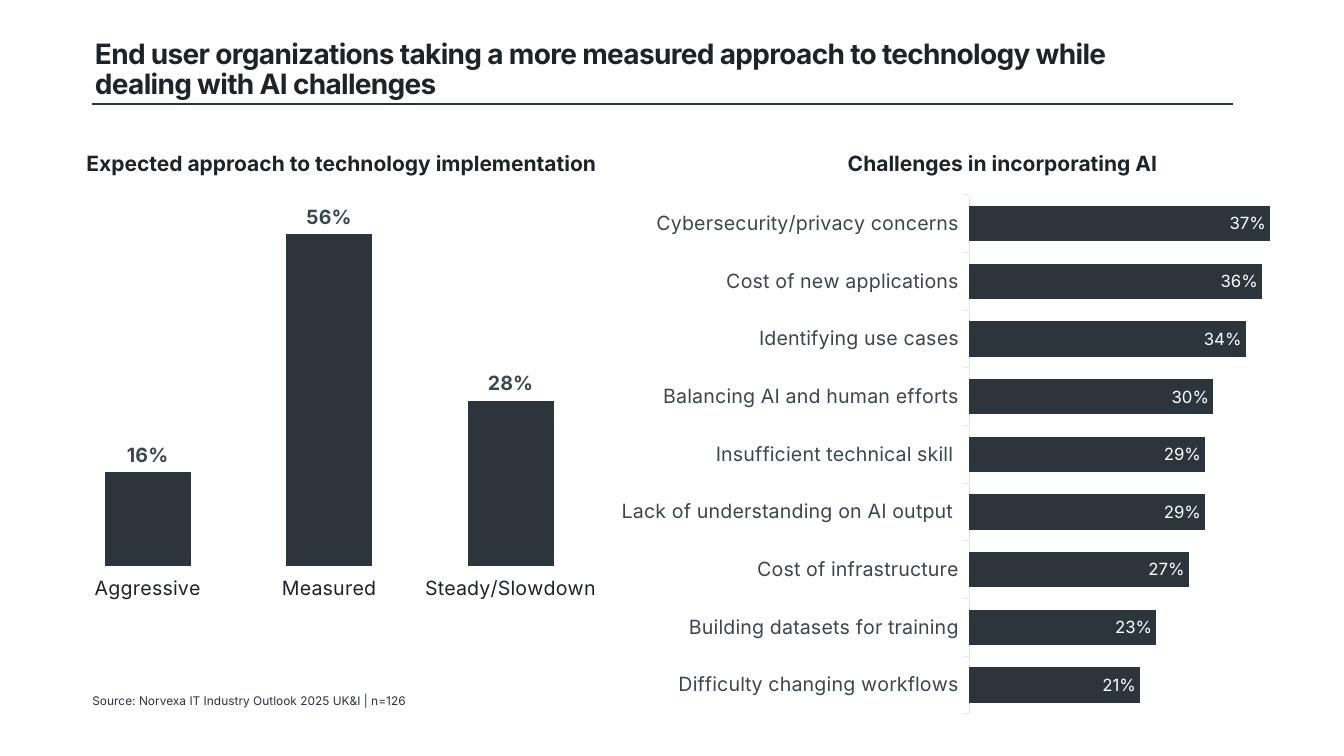
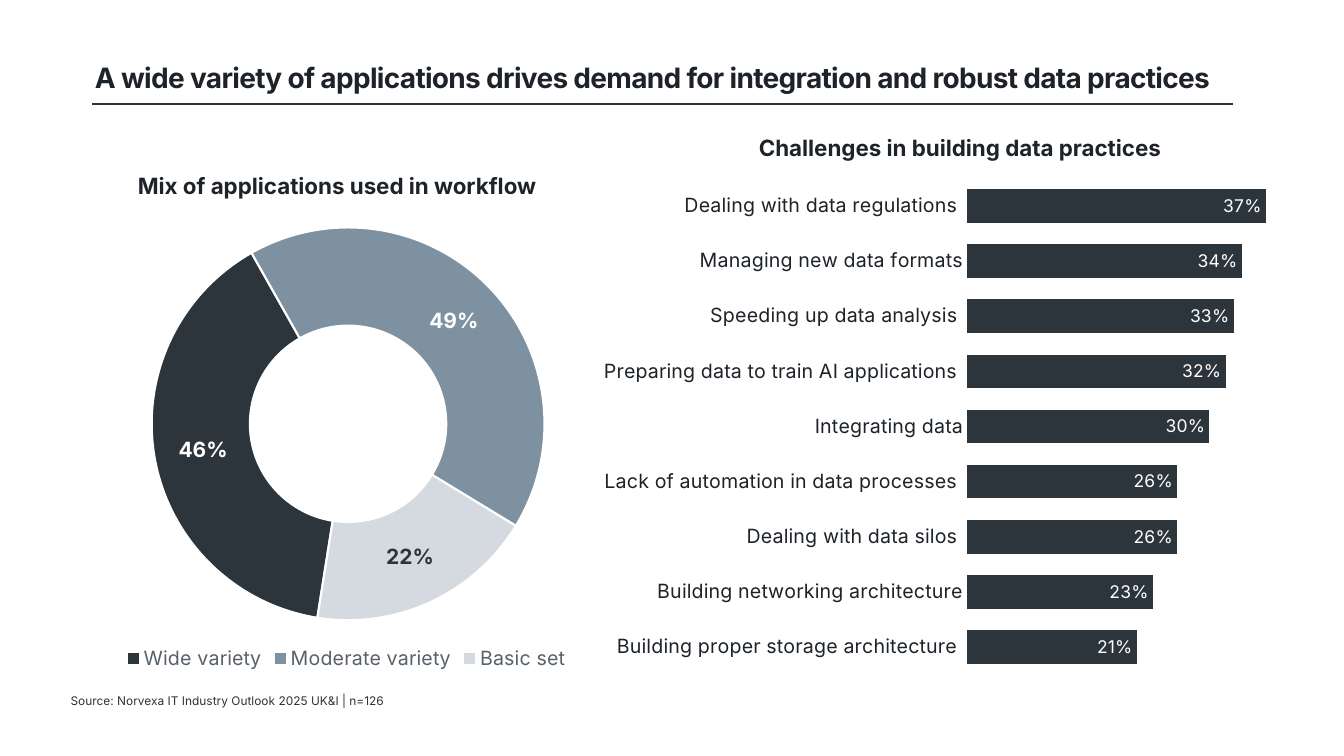
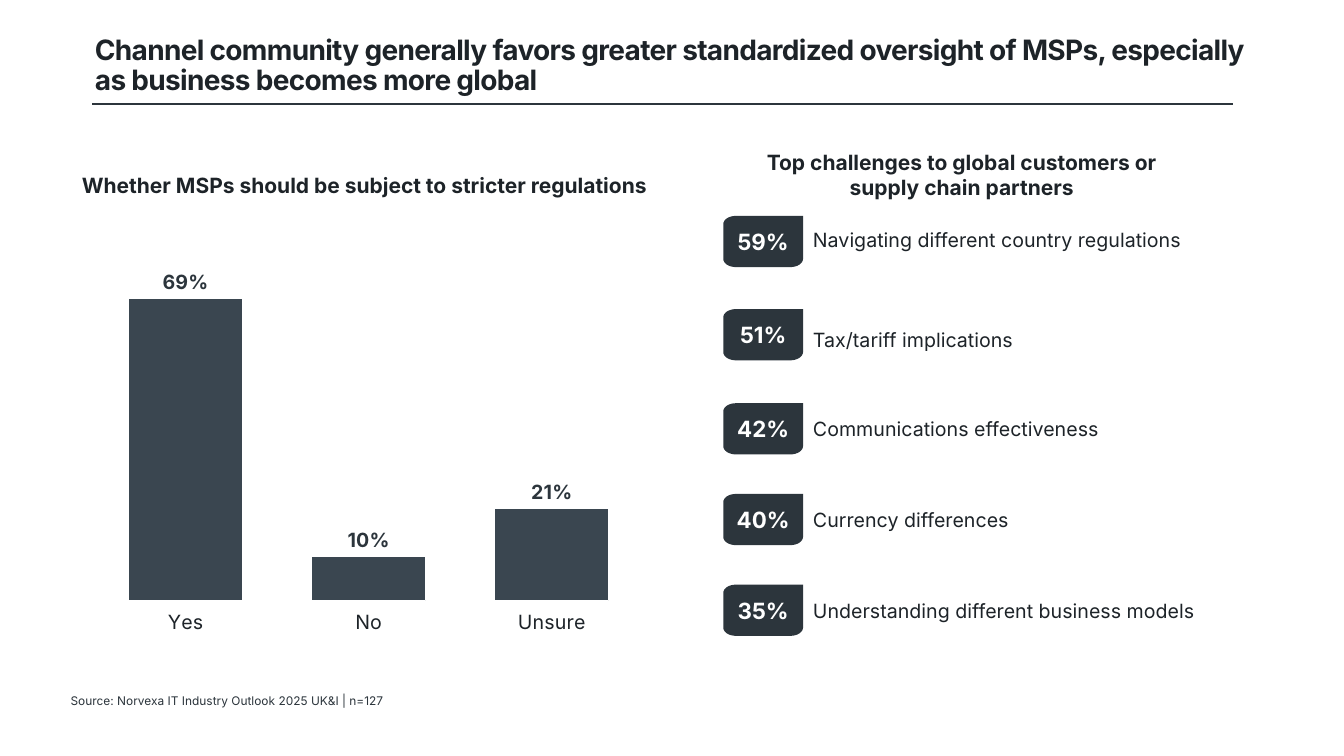
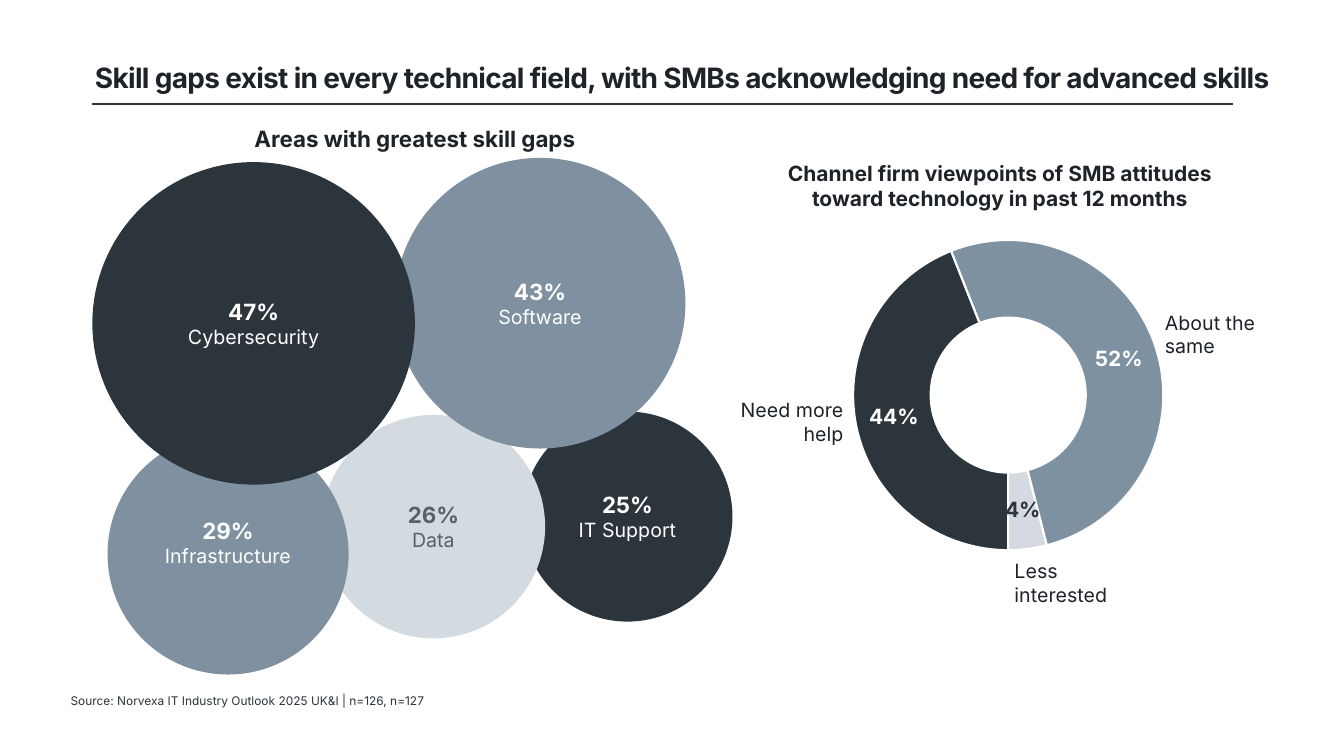
from dataclasses import dataclass
from math import cos, pi, sin
from typing import Optional

from lxml import etree
from pptx import Presentation
from pptx.chart.data import CategoryChartData
from pptx.dml.color import RGBColor
from pptx.enum.chart import XL_CHART_TYPE as Chart
from pptx.enum.chart import XL_LABEL_POSITION as LabelPos
from pptx.enum.chart import XL_LEGEND_POSITION as LegendPos
from pptx.enum.chart import XL_TICK_MARK as Tick
from pptx.enum.shapes import MSO_CONNECTOR as Connector
from pptx.enum.shapes import MSO_SHAPE as Shape
from pptx.enum.text import MSO_ANCHOR as Anchor
from pptx.enum.text import MSO_AUTO_SIZE as AutoSize
from pptx.enum.text import PP_ALIGN as Align
from pptx.oxml.ns import qn
from pptx.util import Inches, Pt

INK = RGBColor(0x1D, 0x23, 0x28)
NAVY = RGBColor(0x2C, 0x35, 0x3C)
SLATE = RGBColor(0x3A, 0x46, 0x50)
GREY = RGBColor(0x58, 0x61, 0x69)
STEEL = RGBColor(0x7E, 0x91, 0xA1)
MIST = RGBColor(0xD4, 0xDA, 0xE0)
BUBBLE_STEEL = RGBColor(0x7F, 0x91, 0xA1)
BUBBLE_MIST = RGBColor(0xD3, 0xDB, 0xE0)
HAIRLINE = RGBColor(0xE5, 0xE7, 0xE9)
WHITE = RGBColor(0xFF, 0xFF, 0xFF)

FONT = "Inter"
CHART_FONT = "Roboto"
PERCENT = "0%"
SURVEY = "Source: Norvexa IT Industry Outlook 2025 UK&I | "

# The slide is a grid of 160 columns and 90 rows of square cells.
CELL = Inches(7.5) / 90


def cells(n: float) -> int:
    return round(n * CELL)


@dataclass(frozen=True)
class Box:
    col: float
    row: float
    cols: float
    rows: float

    def emu(self) -> tuple[int, int, int, int]:
        return cells(self.col), cells(self.row), cells(self.cols), cells(self.rows)


@dataclass(frozen=True)
class Style:
    size: float
    color: RGBColor = INK
    bold: bool = False
    name: str = FONT


@dataclass(frozen=True)
class Bars:
    kind: Chart
    box: Box
    plot: tuple[float, float, float, float]
    data: dict[str, float]
    top: float
    gap: int
    labels: Style
    label_pos: LabelPos
    axis: Style
    fill: RGBColor = NAVY
    outline: Optional[RGBColor] = None
    axis_line: Optional[RGBColor] = None
    tick: Tick = Tick.OUTSIDE
    overlap: int = 0


@dataclass(frozen=True)
class Ring:
    box: Box
    plot: tuple[float, float, float, float]
    data: dict[str, float]
    start: int
    legend: bool = False


@dataclass(frozen=True)
class Badge:
    row: float
    label_row: float
    value: str
    label: str


@dataclass(frozen=True)
class Bubble:
    col: float
    row: float
    size: float
    fill: RGBColor
    value: str
    label: str
    color: RGBColor = WHITE
    bottom_inset: float = 0.6


TITLE = Style(20, bold=True)
HEADING = Style(15, bold=True)
BIG_HEADING = Style(16, bold=True)
BODY = Style(14)
SOURCE = Style(8.5, NAVY)


def apply(font, style: Style) -> None:
    formats = {"size": Pt(style.size), "bold": style.bold, "name": style.name}
    for key, value in formats.items():
        setattr(font, key, value)
    font.color.rgb = style.color


def set_insets(tf, inset: float) -> None:
    for side in ("left", "top", "right", "bottom"):
        setattr(tf, f"margin_{side}", inset)


def add_text(slide, box: Box, text: str, style: Style, align: Align = Align.LEFT):
    tf = slide.shapes.add_textbox(*box.emu()).text_frame
    tf.word_wrap = True
    tf.auto_size = AutoSize.SHAPE_TO_FIT_TEXT
    p = tf.paragraphs[0]
    p.alignment = align
    r = p.add_run()
    r.text = text
    apply(r.font, style)
    return tf


def add_heading(slide, box: Box, text: str, style: Style = HEADING) -> None:
    add_text(slide, box, text, style, Align.CENTER)


def new_slide(prs, title: str, box: Box, sample: str, source_col: float = 8.4):
    """Add a slide with its title, the rule under it and the source line."""
    slide = prs.slides.add_slide(prs.slide_layouts[5])
    sp = slide.shapes.title
    sp.left, sp.top, sp.width, sp.height = box.emu()
    tf = sp.text_frame
    tf.auto_size = AutoSize.NONE
    tf.vertical_anchor = Anchor.MIDDLE
    p = tf.paragraphs[0]
    p.alignment, p.line_spacing = Align.LEFT, 0.9
    r = p.add_run()
    r.text = title
    apply(r.font, TITLE)
    r.font._element.set("spc", "-50")

    rule = slide.shapes.add_connector(
        Connector.STRAIGHT, cells(11), cells(12.4), cells(146.8), cells(12.4))
    rule.line.color.rgb = NAVY
    rule.line.width = Pt(1)
    etree.SubElement(rule._element.spPr, qn("a:effectLst"))

    tf = add_text(slide, Box(source_col, 82.2, 84, 2.4), SURVEY + sample, SOURCE)
    tf.auto_size = AutoSize.NONE
    tf.vertical_anchor = Anchor.MIDDLE
    set_insets(tf, 0)
    return slide


def place_plot(chart, plot: tuple[float, float, float, float]) -> None:
    """Fix the inner plot area as shares of the chart frame."""
    area = chart._chartSpace.chart.plotArea
    for old in area.findall(qn("c:layout")):
        area.remove(old)
    layout = etree.Element(qn("c:layout"))
    manual = etree.SubElement(layout, qn("c:manualLayout"))
    values = {"layoutTarget": "inner", "xMode": "edge", "yMode": "edge"}
    values |= dict(zip("xywh", plot))
    for tag, value in values.items():
        etree.SubElement(manual, qn(f"c:{tag}")).set("val", str(value))
    area.insert(0, layout)


def add_chart(slide, kind: Chart, item):
    data = CategoryChartData(number_format=PERCENT)
    data.categories = list(item.data)
    data.add_series("Series 1", list(item.data.values()))
    chart = slide.shapes.add_chart(kind, *item.box.emu(), data).chart
    chart.has_title = False
    chart.has_legend = False
    apply(chart.font, Style(11, GREY, name=CHART_FONT))
    place_plot(chart, item.plot)
    return chart


def add_value_labels(plot, style: Style):
    plot.has_data_labels = True
    labels = plot.data_labels
    labels.show_value = True
    labels.number_format = PERCENT
    labels.number_format_is_linked = False
    apply(labels.font, style)
    return labels


def add_bars(slide, bars: Bars) -> None:
    chart = add_chart(slide, bars.kind, bars)
    plot = chart.plots[0]
    plot.vary_by_categories = False
    plot.gap_width, plot.overlap = bars.gap, bars.overlap
    add_value_labels(plot, bars.labels).position = bars.label_pos

    series = plot.series[0]
    series.invert_if_negative = False
    series.format.fill.solid()
    series.format.fill.fore_color.rgb = bars.fill
    if bars.outline is not None:
        series.format.line.color.rgb = bars.outline
        series.format.line.width = Pt(0.75)

    values = chart.value_axis
    values.minimum_scale, values.maximum_scale = 0, bars.top
    values.has_major_gridlines = False
    values.visible = False

    axis = chart.category_axis
    axis.major_tick_mark = bars.tick
    axis.minor_tick_mark = Tick.NONE
    apply(axis.tick_labels.font, bars.axis)
    if bars.axis_line is None:
        axis.format.line.fill.background()
    else:
        axis.format.line.color.rgb = bars.axis_line
        axis.format.line.width = Pt(0.75)


def add_ring(slide, ring: Ring) -> None:
    chart = add_chart(slide, Chart.DOUGHNUT, ring)
    plot = chart.plots[0]
    add_value_labels(plot, Style(15, NAVY, bold=True))
    for tag, value in {"firstSliceAng": ring.start, "holeSize": 54}.items():
        plot._element.find(qn(f"c:{tag}")).set("val", str(value))
    colors = ((NAVY, WHITE), (STEEL, WHITE), (MIST, NAVY))
    for i, (fill, label) in enumerate(colors):
        point = plot.series[0].points[i]
        point.format.fill.solid()
        point.format.fill.fore_color.rgb = fill
        point.format.line.color.rgb = WHITE
        point.format.line.width = Pt(1.5)
        apply(point.data_label.font, Style(15, label, bold=True))
    if ring.legend:
        chart.has_legend = True
        chart.legend.position = LegendPos.BOTTOM
        chart.legend.include_in_layout = False
        apply(chart.legend.font, Style(14, GREY))


def finish_shape(sp, fill: RGBColor, lines: list[tuple[str, Style]]) -> None:
    """Fill a shape and centre one paragraph in it for each line."""
    sp.shadow.inherit = False
    sp.fill.solid()
    sp.fill.fore_color.rgb = fill
    sp.line.fill.background()
    tf = sp.text_frame
    tf.vertical_anchor = Anchor.MIDDLE
    for i, (text, style) in enumerate(lines):
        p = tf.add_paragraph() if i else tf.paragraphs[0]
        p.alignment = Align.CENTER
        r = p.add_run()
        r.text = text
        apply(r.font, style)


def add_badge(slide, badge: Badge) -> None:
    """Draw a plate with three rounded corners and its label on the right."""
    left, width, height = 86.1, 9.5, 6.1
    rx, ry, steps = 1.5, 1, 8
    right, bottom = left + width, badge.row + height
    centres = ((right - rx, bottom - ry), (left + rx, bottom - ry),
               (left + rx, badge.row + ry))
    outline = []
    for quarter, (cx, cy) in enumerate(centres):
        for step in range(steps + 1):
            angle = (quarter + step / steps) * pi / 2
            outline.append((cells(cx + rx * cos(angle)), cells(cy + ry * sin(angle))))
    builder = slide.shapes.build_freeform(cells(right), cells(badge.row))
    builder.add_line_segments(outline, close=True)
    sp = builder.convert_to_shape()
    finish_shape(sp, NAVY, [(badge.value, Style(16, WHITE, bold=True))])
    set_insets(sp.text_frame, 0)
    add_text(slide, Box(right, badge.label_row, 51, 4.1), badge.label, BODY)


def add_bubble(slide, bubble: Bubble) -> None:
    box = Box(bubble.col, bubble.row, bubble.size, bubble.size)
    sp = slide.shapes.add_shape(Shape.OVAL, *box.emu())
    finish_shape(sp, bubble.fill, [
        (bubble.value, Style(16, bubble.color, bold=True)),
        (bubble.label, Style(14, bubble.color)),
    ])
    sp.text_frame.margin_bottom = cells(bubble.bottom_inset)


def build_approach(prs) -> None:
    slide = new_slide(
        prs, "End user organizations taking a more measured approach to technology "
        "while dealing with AI challenges", Box(10.1, 4.2, 134.2, 8.4), "n=126", 11)
    add_bars(slide, Bars(
        Chart.COLUMN_CLUSTERED, Box(6.8, 24.2, 64.8, 54.1), (0, 0.04, 1, 0.76),
        {"Aggressive": 0.16, "Measured": 0.56, "Steady/Slowdown": 0.28},
        top=0.58, gap=108, labels=Style(14, SLATE, bold=True),
        label_pos=LabelPos.OUTSIDE_END, axis=BODY, outline=WHITE))
    add_heading(slide, Box(7.6, 17.3, 66.1, 4.2),
                "Expected approach to technology implementation")
    add_bars(slide, Bars(
        Chart.BAR_CLUSTERED, Box(66, 21.6, 92.3, 64.1), (0.535, 0.025, 0.409, 0.964),
        {
            "Difficulty changing workflows": 0.21,
            "Building datasets for training": 0.23,
            "Cost of infrastructure": 0.27,
            "Lack of understanding on AI output ": 0.29,
            "Insufficient technical skill ": 0.29,
            "Balancing AI and human efforts": 0.3,
            "Identifying use cases": 0.34,
            "Cost of new applications": 0.36,
            "Cybersecurity/privacy concerns": 0.37,
        },
        top=0.39, gap=64, overlap=-7, labels=Style(12, WHITE),
        label_pos=LabelPos.INSIDE_END, axis=Style(14, SLATE), axis_line=HAIRLINE))
    add_heading(slide, Box(86.3, 17.3, 66.1, 4.2), "Challenges in incorporating AI")


def build_applications(prs) -> None:
    slide = new_slide(
        prs, "A wide variety of applications drives demand for integration and "
        "robust data practices", Box(10.1, 5.2, 142.8, 8.4), "n=126")
    add_ring(slide, Ring(
        Box(2.6, 25.6, 77.3, 54.7), (0.19, 0.027, 0.625, 0.855),
        {"Wide variety": 0.46, "Moderate variety": 0.49, "Basic set": 0.22},
        start=189, legend=True))
    add_heading(slide, Box(14.9, 19.9, 50.5, 4.4),
                "Mix of applications used in workflow", BIG_HEADING)
    add_bars(slide, Bars(
        Chart.BAR_CLUSTERED, Box(65.5, 19.7, 92.3, 61.3), (0.538, 0.025, 0.406, 0.964),
        {
            "Building proper storage architecture ": 0.21,
            "Building networking architecture": 0.23,
            "Dealing with data silos ": 0.26,
            "Lack of automation in data processes ": 0.26,
            "Integrating data": 0.3,
            "Preparing data to train AI applications ": 0.32,
            "Speeding up data analysis ": 0.33,
            "Managing new data formats": 0.34,
            "Dealing with data regulations ": 0.37,
        },
        top=0.39, gap=64, overlap=-7, labels=Style(12.5, WHITE),
        label_pos=LabelPos.INSIDE_END, axis=BODY, tick=Tick.NONE))
    add_heading(slide, Box(86.3, 15.4, 56, 4.4),
                "Challenges in building data practices", BIG_HEADING)


def build_oversight(prs) -> None:
    slide = new_slide(
        prs, "Channel community generally favors greater standardized oversight of "
        "MSPs, especially as business becomes more global",
        Box(10.1, 3.7, 142.8, 8.4), "n=127")
    add_bars(slide, Bars(
        Chart.COLUMN_CLUSTERED, Box(11.2, 26.9, 65.4, 54.1), (0, 0.035, 1, 0.79),
        {"Yes": 0.69, "No": 0.1, "Unsure": 0.21},
        top=0.82, gap=61, labels=Style(14, NAVY, bold=True),
        label_pos=LabelPos.OUTSIDE_END, axis=BODY, fill=SLATE, outline=WHITE))
    add_heading(slide, Box(8.4, 20, 70, 4.2),
                "Whether MSPs should be subject to stricter regulations")
    for badge in (
        Badge(25.7, 26.6, "59%", "Navigating different country regulations"),
        Badge(36.8, 38.4, "51%", "Tax/tariff implications"),
        Badge(48, 49.1, "42%", "Communications effectiveness"),
        Badge(58.8, 59.9, "40%", "Currency differences"),
        Badge(69.6, 70.7, "35%", "Understanding different business models"),
    ):
        add_badge(slide, badge)
    add_heading(slide, Box(89.4, 17.2, 50.2, 7.3),
                "Top challenges to global customers or supply chain partners")


def build_skills(prs) -> None:
    slide = new_slide(
        prs, "Skill gaps exist in every technical field, with SMBs acknowledging "
        "need for advanced skills", Box(10.1, 5.2, 142.8, 8.4), "n=126, n=127")
    for bubble in (
        Bubble(62.2, 49, 25, NAVY, "25%", "IT Support"),
        Bubble(38.3, 49.4, 26.6, BUBBLE_MIST, "26%", "Data", GREY),
        Bubble(12.8, 51.6, 28.7, BUBBLE_STEEL, "29%", "Infrastructure",
               bottom_inset=3.4),
        Bubble(47, 18.8, 34.6, BUBBLE_STEEL, "43%", "Software"),
        Bubble(11, 19.3, 38.4, NAVY, "47%", "Cybersecurity"),
    ):
        add_bubble(slide, bubble)
    add_heading(slide, Box(16.7, 14.3, 65.4, 4.4),
                "Areas with greatest skill gaps", BIG_HEADING)
    add_ring(slide, Ring(
        Box(90.4, 26.2, 59.2, 43.2), (0.188, 0.055, 0.625, 0.855),
        {"1": 0.44, "2": 0.52, "3": 0.04}, start=180))
    add_heading(slide, Box(92.3, 18.5, 53.5, 7.3),
                "Channel firm viewpoints of SMB attitudes toward technology "
                "in past 12 months")
    for col, row, text, align in (
        (137.5, 36.4, "About the same", Align.LEFT),
        (119.6, 66, "Less interested", Align.LEFT),
        (85, 46.8, "Need more help", Align.RIGHT),
    ):
        add_text(slide, Box(col, row, 16.6, 6.8), text, BODY, align)


def main() -> None:
    prs = Presentation()
    prs.slide_width, prs.slide_height = cells(160), cells(90)
    for build in (build_approach, build_applications, build_oversight, build_skills):
        build(prs)
    prs.save("out.pptx")


if __name__ == "__main__":
    main()
